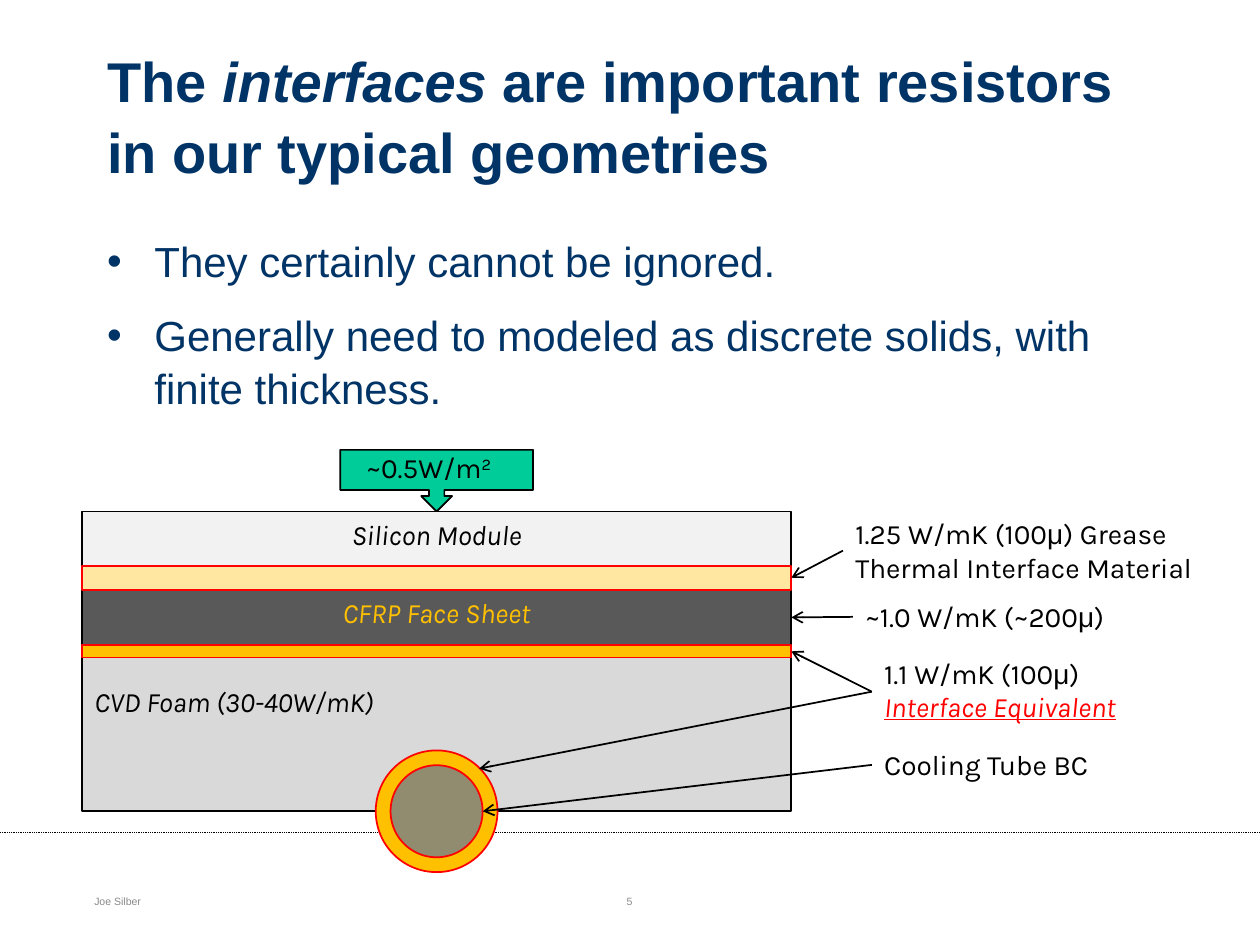
from dataclasses import dataclass, replace

from lxml import etree
from pptx import Presentation
from pptx.dml.color import RGBColor
from pptx.enum.dml import MSO_LINE
from pptx.enum.shapes import MSO_CONNECTOR, MSO_SHAPE
from pptx.enum.text import MSO_ANCHOR, MSO_AUTO_SIZE, PP_ALIGN
from pptx.oxml.ns import qn
from pptx.util import Pt

RECT, OVAL = MSO_SHAPE.RECTANGLE, MSO_SHAPE.OVAL
CALLOUT = MSO_SHAPE.RIGHT_ARROW_CALLOUT
STRAIGHT = MSO_CONNECTOR.STRAIGHT
DOT = MSO_LINE.ROUND_DOT
TOP, MIDDLE = MSO_ANCHOR.TOP, MSO_ANCHOR.MIDDLE
FIXED = MSO_AUTO_SIZE.NONE
AT_LEFT, AT_MID = PP_ALIGN.LEFT, PP_ALIGN.CENTER

NAVY = RGBColor(0x00, 0x33, 0x66)
BLACK = RGBColor(0x00, 0x00, 0x00)
GREY = RGBColor(0x89, 0x89, 0x89)
RED = RGBColor(0xFF, 0x00, 0x00)
GOLD = RGBColor(0xFF, 0xC0, 0x00)
GREEN = RGBColor(0x00, 0xCC, 0x99)
PALE = RGBColor(0xF2, 0xF2, 0xF2)
DARK = RGBColor(0x59, 0x59, 0x59)
FOAM = RGBColor(0xD9, 0xD9, 0xD9)
TUBE = RGBColor(0x91, 0x8B, 0x6F)

LEFT, WIDE = 46.8, 405.4
MID = LEFT + WIDE / 2
BASE = 463.6


@dataclass(frozen=True)
class Span:
    text: str
    font: str = "Karla"
    size: float = 16
    color: RGBColor = BLACK
    bold: bool = False
    slant: bool = False
    under: bool = False
    raised: bool = False


@dataclass(frozen=True)
class Box:
    x: float
    y: float
    w: float
    h: float


@dataclass(frozen=True)
class Layer:
    name: str
    y: float
    h: float
    fill: RGBColor
    line: RGBColor = BLACK
    text: str = ""
    color: RGBColor = BLACK
    align: PP_ALIGN = AT_MID
    inset: float = 3.6
    alpha: int = 100


@dataclass(frozen=True)
class Label:
    box: Box
    lines: list
    ends: list


def write(frame, lines, align=AT_LEFT, anchor=TOP):
    frame.word_wrap = True
    frame.auto_size = FIXED
    frame.vertical_anchor = anchor
    for i, spans in enumerate(lines):
        para = frame.paragraphs[0] if i == 0 else frame.add_paragraph()
        para.alignment = align
        for span in spans:
            run = para.add_run()
            run.text = span.text
            font = run.font
            font.name, font.size = span.font, Pt(span.size)
            font.bold, font.italic = span.bold, span.slant
            font.underline = span.under
            font.color.rgb = span.color
            if span.raised:
                run._r.get_or_add_rPr().set("baseline", "30000")


def place(shape, box: Box):
    shape.left, shape.top = Pt(box.x), Pt(box.y)
    shape.width, shape.height = Pt(box.w), Pt(box.h)


def add_text(slide, box: Box, lines, align=AT_LEFT, anchor=TOP):
    shape = slide.shapes.add_textbox(Pt(box.x), Pt(box.y), Pt(box.w), Pt(box.h))
    write(shape.text_frame, lines, align, anchor)
    return shape


def add_form(slide, kind, box: Box, fill: RGBColor, line: RGBColor):
    shape = slide.shapes.add_shape(kind, Pt(box.x), Pt(box.y), Pt(box.w), Pt(box.h))
    shape.shadow.inherit = False
    shape.fill.solid()
    shape.fill.fore_color.rgb = fill
    shape.line.color.rgb = line
    shape.line.width = Pt(1)
    return shape


def add_layer(slide, layer: Layer):
    shape = add_form(slide, RECT, Box(LEFT, layer.y, WIDE, layer.h), layer.fill, layer.line)
    if layer.alpha < 100:
        tint = shape.fill._xPr.find(qn("a:solidFill"))[0]
        etree.SubElement(tint, qn("a:alpha")).set("val", str(layer.alpha * 1000))
    if layer.text:
        shape.text_frame.margin_top = Pt(layer.inset)
        write(shape.text_frame, [[Span(layer.text, color=layer.color, slant=True)]], layer.align)
    return shape


def add_line(slide, start, end, width: float):
    line = slide.shapes.add_connector(STRAIGHT, *(Pt(v) for v in (*start, *end)))
    line.line.color.rgb = BLACK
    line.line.width = Pt(width)
    etree.SubElement(line._element.spPr, qn("a:effectLst"))
    return line


def add_label(slide, label: Label, layers: dict):
    box = label.box
    shape = add_text(slide, box, label.lines)
    for end in label.ends:
        layer = layers.get(end)
        goal = (LEFT + WIDE, box.y) if layer else end
        line = add_line(slide, (box.x, box.y + box.h / 2), goal, 1)
        line.begin_connect(shape, 1)
        if layer:
            line.end_connect(layer, 3)
        etree.SubElement(line.line._get_or_add_ln(), qn("a:tailEnd")).set("type", "arrow")


def micron(before: str, after: str):
    return [Span(before), Span("μ", "Arial"), Span(after)]


LAYERS = [
    Layer("module", 292.3, 31, PALE, text="Silicon Module"),
    Layer("sheet", 337, 31.6, DARK, text="CFRP Face Sheet", color=GOLD),
    Layer("foam", 368.6, BASE - 368.6, FOAM, text="CVD Foam (30-40W/mK)", align=AT_LEFT, inset=22.4),
    Layer("pad", 323.3, 13.7, GOLD, RED, alpha=37),
    Layer("bond", 368.6, 7.2, GOLD, RED),
]
RINGS = [(34.8, GOLD), (26.3, TUBE)]
LABELS = [
    Label(Box(481.7, 291.6, 210.2, 46.1),
          [micron("1.25 W/mK (100", ") Grease"), [Span("Thermal Interface Material")]], ["pad"]),
    Label(Box(487.4, 339.2, 155.5, 26.6), [micron("~1.0 W/mK (~200", ")")], ["sheet"]),
    Label(Box(498.2, 371.5, 169.2, 47.5),
          [micron("1.1 W/mK (100", ")"),
           [Span("Interface Equivalent", color=RED, slant=True, under=True)]],
          ["bond", (273.8, 439.2)]),
    Label(Box(498.2, 423.4, 135.4, 27.4), [[Span("Cooling Tube BC")]], [(MID + 26.3, BASE)]),
]
HEAD = Span("The ", "Arial", 32, NAVY, bold=True)
POINTS = [
    "They certainly cannot be ignored.",
    "Generally need to modeled as discrete solids, with finite thickness.",
]
FOOTS = [
    (Box(46.8, 500.4, 228.2, 28.8), "Joe Silber", AT_LEFT),
    (Box(275.8, 500.4, 167.8, 28.8), "5", AT_MID),
]


def add_head(slide):
    title, body = slide.placeholders
    place(title, Box(54, 20.2, 612.7, 90))
    write(title.text_frame, [[
        HEAD,
        replace(HEAD, text="interfaces", slant=True),
        replace(HEAD, text=" are important resistors in our typical geometries"),
    ]], anchor=MIDDLE)
    title.text_frame.paragraphs[0].line_spacing = 1.05
    place(body, Box(54, 129.6, 612.7, 75.6))
    write(body.text_frame, [[Span(text, "Arial", 24, NAVY)] for text in POINTS])
    for i, para in enumerate(body.text_frame.paragraphs):
        para.line_spacing = 1.05
        para.space_before = Pt(12 if i else 0)
        props = para._p.get_or_add_pPr()
        props.set("marL", str(Pt(27)))
        props.set("indent", str(-Pt(27)))
        etree.SubElement(props, qn("a:buFont")).set("typeface", "Arial")
        etree.SubElement(props, qn("a:buChar")).set("char", "•")


def main():
    deck = Presentation()
    deck.slide_width, deck.slide_height = Pt(720), Pt(540)
    slide = deck.slides.add_slide(deck.slide_layouts[1])
    add_head(slide)
    add_line(slide, (0, 475.9), (720, 475.9), 0.5).line.dash_style = DOT
    for box, text, align in FOOTS:
        add_text(slide, box, [[Span(text, "Arial", 6, GREY)]], align, MIDDLE)
    heat = add_form(slide, CALLOUT, Box(MID - 17.6, 219.6, 35.2, 110.2), GREEN, BLACK)
    heat.rotation = 90
    layers = {layer.name: add_layer(slide, layer) for layer in LAYERS}
    for r, fill in RINGS:
        add_form(slide, OVAL, Box(MID - r, BASE - r, 2 * r, 2 * r), fill, RED)
    add_text(slide, Box(202.3, 254.2, 87.1, 26.6), [[Span("~0.5W/m"), Span("2", raised=True)]])
    for label in LABELS:
        add_label(slide, label, layers)
    deck.save("out.pptx")


if __name__ == "__main__":
    main()
